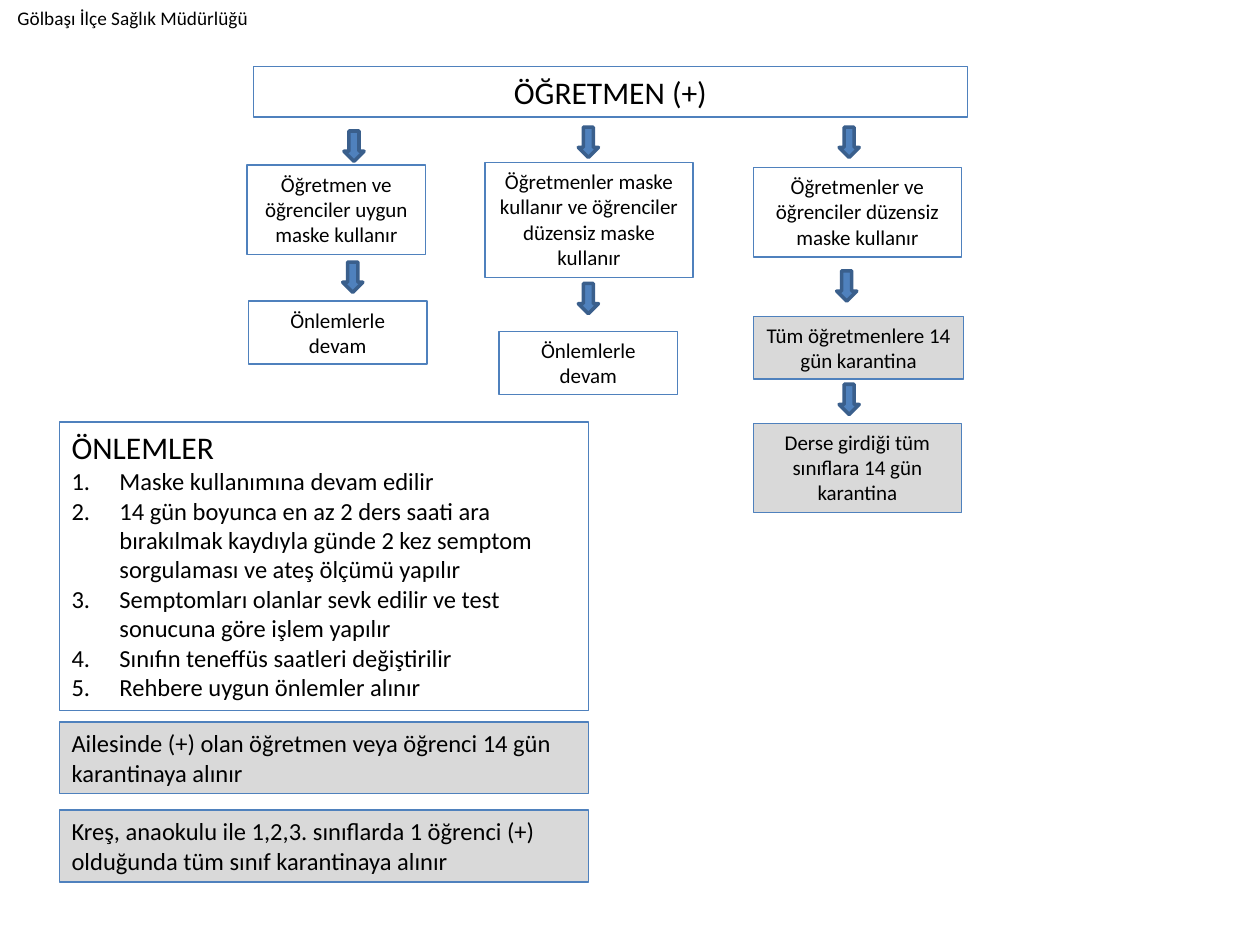
from lxml import etree
from pptx import Presentation
from pptx import util as u
from pptx.dml.color import RGBColor
from pptx.enum import shapes, text
from pptx.oxml import ns

COLORS = {"blue": "4F81BD", "dark_blue": "3A5F8C", "gray": "D9D9D9", "black": "000000"}
FONT = "Calibri"

presentation = Presentation()
presentation.slide_width = u.Inches(10)
presentation.slide_height = u.Inches(7.5)
slide = presentation.slides.add_slide(presentation.slide_layouts[6])


def write(shape, lines, size, align):
    frame = shape.text_frame
    frame.word_wrap = True
    frame.auto_size = text.MSO_AUTO_SIZE.SHAPE_TO_FIT_TEXT
    frame.vertical_anchor = text.MSO_ANCHOR.TOP
    for index, line in enumerate(lines):
        paragraph = frame.add_paragraph() if index else frame.paragraphs[0]
        paragraph.text = line
        paragraph.alignment = align
        paragraph.font.size = u.Pt(size)
        paragraph.font.name = FONT
        paragraph.font.color.rgb = RGBColor.from_string(COLORS["black"])


def add_block(kind, place, fill, line, width):
    shape = slide.shapes.add_shape(kind, *[u.Inches(length) for length in place])
    shape.shadow.inherit = False
    if fill:
        shape.fill.solid()
        shape.fill.fore_color.rgb = RGBColor.from_string(COLORS[fill])
    else:
        shape.fill.background()
    shape.line.color.rgb = RGBColor.from_string(COLORS[line])
    shape.line.width = u.Pt(width)
    return shape


# Sender at the top left
sender = slide.shapes.add_textbox(u.Inches(0.04), 0, u.Inches(2.81), u.Inches(0.29))
write(sender, ["Gölbaşı İlçe Sağlık Müdürlüğü"], 11, text.PP_ALIGN.LEFT)

# Flow chart: heading and three branches of boxes
flow_boxes = [
    ((2.01, 0.53, 5.67, 0.4), None, 18, "ÖĞRETMEN (+)"),
    ((1.96, 1.31, 1.42, 0.71), None, 12, "Öğretmen ve öğrenciler uygun maske kullanır"),
    ((1.97, 2.39, 1.42, 0.5), None, 12, "Önlemlerle devam"),
    ((3.85, 1.29, 1.65, 0.91), None, 12,
     "Öğretmenler maske kullanır ve öğrenciler düzensiz maske kullanır"),
    ((3.96, 2.63, 1.42, 0.5), None, 12, "Önlemlerle devam"),
    ((5.98, 1.33, 1.65, 0.71), None, 12,
     "Öğretmenler ve öğrenciler düzensiz maske kullanır"),
    ((5.98, 2.51, 1.67, 0.5), "gray", 12, "Tüm öğretmenlere 14 gün karantina"),
    ((5.98, 3.36, 1.65, 0.71), "gray", 12, "Derse girdiği tüm sınıflara 14 gün karantina"),
]
for place, fill, size, label in flow_boxes:
    box = add_block(shapes.MSO_SHAPE.RECTANGLE, place, fill, "blue", 0.75)
    write(box, [label], size, text.PP_ALIGN.CENTER)

# Block arrows between the steps
arrow_corners = [(2.73, 1.04), (2.72, 2.08), (4.59, 1.01), (4.59, 2.25),
                 (6.66, 1.01), (6.64, 2.15), (6.66, 3.05)]
for left, top in arrow_corners:
    add_block(shapes.MSO_SHAPE.DOWN_ARROW, (left, top, 0.16, 0.24), "blue", "dark_blue", 2)

# Measures and quarantine rules at the bottom left
measures = [
    "ÖNLEMLER",
    "Maske kullanımına devam edilir",
    "14 gün boyunca en az 2 ders saati ara bırakılmak kaydıyla günde 2 kez "
    "semptom sorgulaması ve ateş ölçümü yapılır",
    "Semptomları olanlar sevk edilir ve test sonucuna göre işlem yapılır",
    "Sınıfın teneffüs saatleri değiştirilir",
    "Rehbere uygun önlemler alınır",
]
rules = [
    (3.35, 2.29, None, measures),
    (5.73, 0.57, "gray",
     ["Ailesinde (+) olan öğretmen veya öğrenci 14 gün karantinaya alınır"]),
    (6.43, 0.57, "gray",
     ["Kreş, anaokulu ile 1,2,3. sınıflarda 1 öğrenci (+) olduğunda "
      "tüm sınıf karantinaya alınır"]),
]
for top, height, fill, lines in rules:
    box = add_block(shapes.MSO_SHAPE.RECTANGLE, (0.47, top, 4.2, height), fill, "blue", 0.75)
    write(box, lines, 14, text.PP_ALIGN.LEFT)
    if lines is measures:
        heading, *items = box.text_frame.paragraphs
        heading.font.size = u.Pt(18)
        for paragraph in items:
            properties = paragraph._p.get_or_add_pPr()
            properties.set("marL", str(u.Inches(0.38)))
            properties.set("indent", str(-u.Inches(0.38)))
            number = etree.Element(ns.qn("a:buAutoNum"), type="arabicPeriod")
            properties.insert_element_before(number, "a:tabLst", "a:defRPr", "a:extLst")

presentation.save("out.pptx")
